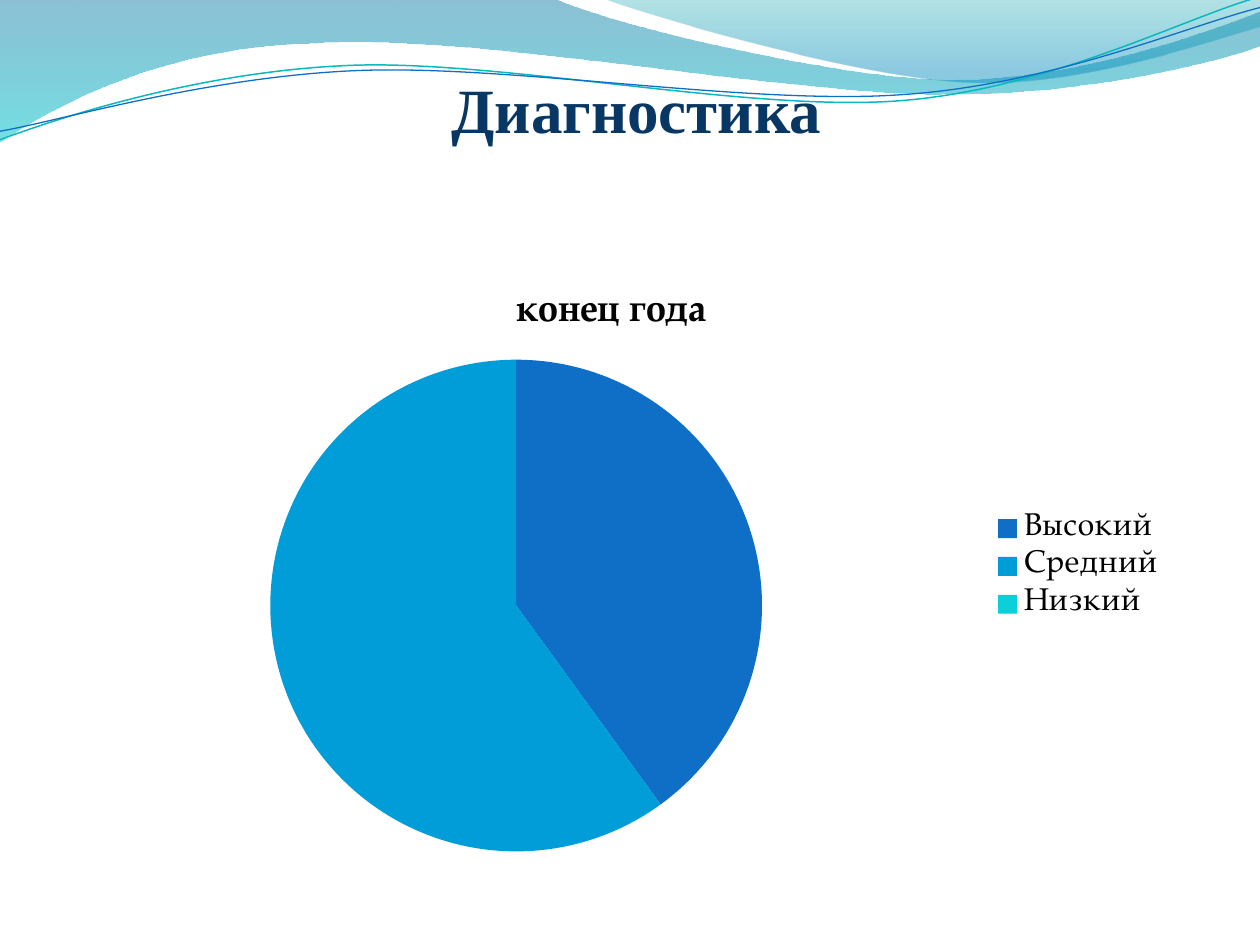
from lxml import etree
from pptx import Presentation
from pptx.chart.data import CategoryChartData
from pptx.dml.color import RGBColor
from pptx.enum import chart as ch, text
from pptx.oxml.ns import qn
from pptx.util import Pt

NAVY = RGBColor(0x08, 0x37, 0x63)
BLACK = RGBColor(0, 0, 0)
BLUE = RGBColor(0x0F, 0x6F, 0xC6)
SKY = RGBColor(0x00, 0x9D, 0xD9)
CYAN = RGBColor(0x0B, 0xD0, 0xD9)
TEAL = RGBColor(0x0A, 0xB8, 0xBF)
WAVE_TOP = RGBColor(0x00, 0x74, 0xA1)
WAVE_BOTTOM = RGBColor(0x00, 0xC6, 0xCF)
CREST_TOP = RGBColor(0x00, 0xA1, 0xA9)
CREST_BOTTOM = RGBColor(0x00, 0x8B, 0xBF)

BODY_FONT = "TeX Gyre Pagella"
LINE_TILT = 357.3
LEVELS = [("Высокий", 40, BLUE), ("Средний", 60, SKY), ("Низкий", 0, CYAN)]

WAVE = [
    [(0, 0)], [(317, -0.7)],
    [(342.7, 12.2), (478, 45.4), (545.8, 45.4)],
    [(614.2, 45.4), (689.8, 18.7), (720, 6.5)],
    [(720.7, 25.9)],
    [(707.8, 31.7), (626.4, 54.7), (537.1, 54)],
    [(447.8, 54), (275, 20.2), (185, 24.5)],
    [(92.9, 25.9), (33.1, 59.8), (-0.7, 81.4)],
    [(0, 0)],
]
CREST = [
    [(344.9, -0.7)],
    [(366.5, 7.9), (491, 44.6), (553.7, 46.8)],
    [(616.3, 49.7), (691.9, 23), (720, 15.1)],
    [(720, 0)], [(344.9, -0.7)],
]
TEAL_LINE = [
    [(-1.4, 62.9)],
    [(33.8, 51.7), (114.1, 29.4), (199.8, 29.9)],
    [(284.9, 30.3), (425.8, 67.3), (512.4, 64.9)],
    [(599, 62.4), (676.5, 25.7), (720.2, 15.5)],
]
BLUE_LINE = [
    [(-1.1, 58)],
    [(32.9, 53.8), (118.3, 32.5), (204.1, 33)],
    [(290.6, 33.4), (428.9, 63.8), (515.5, 61.4)],
    [(601.3, 59.6), (678.4, 30.1), (721.4, 21.3)],
]


def add_outline(shapes, x, y, segments, close):
    """Draw an outline of points and cubic curves relative to x, y."""
    pts = [(Pt(x + px), Pt(y + py)) for seg in segments for px, py in seg]
    fb = shapes.build_freeform(*pts[0])
    fb.add_line_segments(pts[1:], close=close)
    sp = fb.convert_to_shape()
    sp.shadow.inherit = False
    outline = next(sp._element.iter(qn("a:path")))
    nodes = iter(outline.findall(qn("a:lnTo")))
    for seg in segments[1:]:
        first = next(nodes)
        if len(seg) == 3:
            curve = etree.Element(qn("a:cubicBezTo"))
            first.addprevious(curve)
            for node in (first, next(nodes), next(nodes)):
                curve.append(node[0])
                outline.remove(node)
    return sp


def add_wave(s, x, y, segments, stops):
    """Draw a closed wave with a see-through vertical gradient."""
    sp = add_outline(s.shapes, x, y, segments, True)
    sp.line.fill.background()
    sp.fill.gradient()
    sp.fill.gradient_angle = 270
    for stop, (pos, color, _) in zip(sp.fill.gradient_stops, stops):
        stop.position = pos
        stop.color.rgb = color
    for clr, (_, _, alpha) in zip(sp._element.spPr.iter(qn("a:srgbClr")), stops):
        etree.SubElement(clr, qn("a:alpha")).set("val", str(alpha * 1000))


def add_header(s, x, y):
    """Draw the waves and thin lines along the top edge."""
    add_wave(s, x, y, WAVE, [(0, WAVE_TOP, 45), (1, WAVE_BOTTOM, 55)])
    add_wave(s, x, y, CREST, [(0, CREST_TOP, 30), (0.8, CREST_BOTTOM, 45)])
    group = s.shapes.add_group_shape()
    for segments, color, width in ((TEAL_LINE, TEAL, 0.85), (BLUE_LINE, BLUE, 0.75)):
        sp = add_outline(group.shapes, x, y, segments, False)
        sp.rotation = LINE_TILT
        sp.fill.background()
        sp.line.color.rgb = color
        sp.line.width = Pt(width)


def set_title(s, x, y, w, h):
    """Place and format the slide title in front of the header."""
    sp = s.shapes.title
    sp.left, sp.top, sp.width, sp.height = Pt(x), Pt(y), Pt(w), Pt(h)
    tf = sp.text_frame
    tf.text = "Диагностика"
    tf.word_wrap = True
    tf.auto_size = text.MSO_AUTO_SIZE.NONE
    tf.vertical_anchor = text.MSO_ANCHOR.BOTTOM
    tf.margin_left = tf.margin_right = tf.margin_bottom = 0
    tf.margin_top = Pt(3.6)
    p = tf.paragraphs[0]
    p.alignment = text.PP_ALIGN.CENTER
    p.font.name, p.font.size, p.font.bold = "Times New Roman", Pt(36), True
    p.font.color.rgb = NAVY
    s.shapes._spTree.append(sp._element)


def add_pie(s, x, y, w, h):
    """Add the pie of levels with its title and legend."""
    names, values, colors = zip(*LEVELS)
    data = CategoryChartData()
    data.categories = names
    data.add_series("конец года", values)
    chart = s.shapes.add_chart(
        ch.XL_CHART_TYPE.PIE, Pt(x), Pt(y), Pt(w), Pt(h), data).chart
    chart.font.name, chart.font.size = BODY_FONT, Pt(18)
    chart.has_title = True
    tf = chart.chart_title.text_frame
    tf.text = "конец года"
    font = tf.paragraphs[0].font
    font.name, font.size, font.bold = BODY_FONT, Pt(21.6), True
    font.color.rgb = BLACK
    chart.has_legend = True
    chart.legend.position = ch.XL_LEGEND_POSITION.RIGHT
    chart.legend.include_in_layout = False
    chart.legend.font.name, chart.legend.font.size = BODY_FONT, Pt(18)
    chart.legend.font.color.rgb = BLACK
    for i, color in enumerate(colors):
        fill = chart.plots[0].series[0].points[i].format.fill
        fill.solid()
        fill.fore_color.rgb = color


def main():
    """Build the slide and save it."""
    prs = Presentation()
    prs.slide_width, prs.slide_height = Pt(720), Pt(540)
    s = prs.slides.add_slide(prs.slide_layouts[5])
    add_header(s, 0, 0)
    set_title(s, 39.6, 16.6, 648, 67)
    add_pie(s, 25.5, 150.9, 648, 345.6)
    prs.save("out.pptx")


if __name__ == "__main__":
    main()
